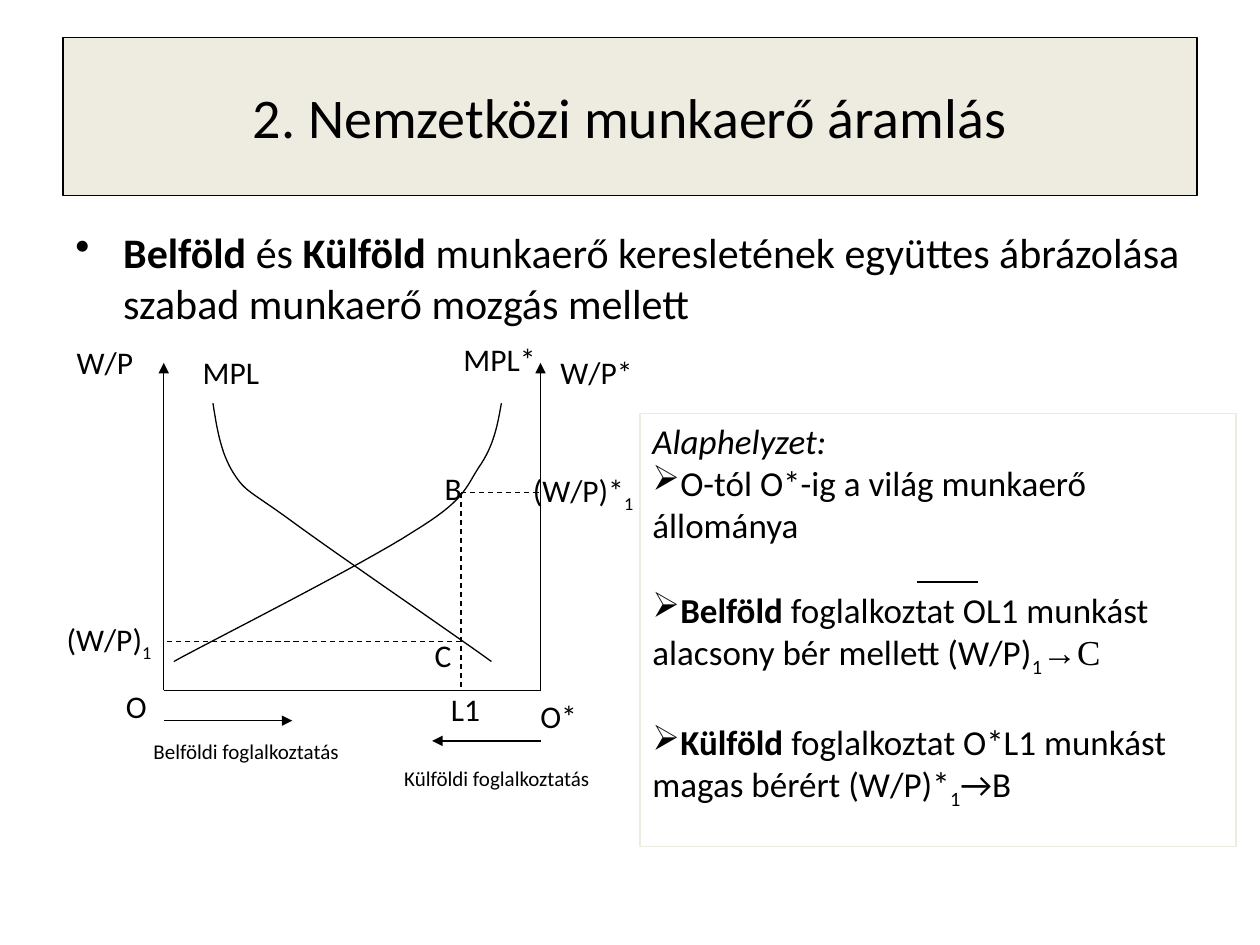
from dataclasses import dataclass
from typing import Optional

from pptx import Presentation
from pptx.dml.color import RGBColor
from pptx.enum.dml import MSO_LINE_DASH_STYLE as Dash
from pptx.enum.shapes import MSO_CONNECTOR as Conn
from pptx.enum.text import MSO_ANCHOR as Anchor, PP_ALIGN as Align
from pptx.oxml.ns import qn
from pptx.util import Inches, Pt
from lxml.etree import SubElement

BLACK = RGBColor(0, 0, 0)
WHITE = RGBColor(255, 255, 255)
CREAM = RGBColor(0xEE, 0xEC, 0xE1)
FONT = "Calibri"

LEFT, RIGHT, TOP, BASE = 1.3, 4.29, 2.88, 5.48  # axes
L1, HIGH, LOW = 3.66, 3.91, 5.09  # labour split and the two wages


@dataclass
class Run:
    text: str
    bold: bool = False
    sub: bool = False
    font: Optional[str] = None


@dataclass
class Para:
    runs: list[Run]
    bullet: str = ""
    gap: float = 0
    indent: float = 0
    italic: bool = False


@dataclass
class Label:
    text: str
    x: float
    y: float
    w: float
    size: int = 18
    sub: str = ""
    wrap: bool = False
    line: Optional[RGBColor] = None


@dataclass
class Line:
    x1: float
    y1: float
    x2: float
    y2: float
    dash: bool = False
    arrow: bool = False


LABELS = [
    Label("B", 3.43, 3.67, 0.37),
    Label("C", 3.35, 5, 0.39, wrap=True),
    Label("MPL", 1.51, 2.75, 0.72),
    Label("MPL*", 3.58, 2.65, 0.82, line=WHITE),
    Label("O*", 4.19, 5.48, 0.49),
    Label("L1", 3.48, 5.43, 0.48),
    Label("W/P", 0.51, 2.67, 0.71, wrap=True),
    Label("W/P*", 4.35, 2.75, 0.77),
    Label("(W/P)", 0.43, 4.87, 1.08, sub="1", wrap=True),
    Label("(W/P)*", 4.13, 3.69, 1.18, sub="1", wrap=True),
    Label("O", 0.9, 5.4, 0.4),
    Label("Belföldi foglalkoztatás", 1.12, 5.81, 2.07, 12, wrap=True),
    Label("Külföldi foglalkoztatás", 3.11, 6.03, 1.95, 12, wrap=True),
]

LINES = [
    Line(1.14, 5.72, 1.14, 5.72, arrow=True),
    Line(LEFT, BASE, LEFT, TOP, arrow=True),
    Line(LEFT, BASE, RIGHT, BASE),
    Line(RIGHT, BASE, RIGHT, TOP, arrow=True),
    Line(L1, HIGH, L1, BASE, dash=True),
    Line(L1, LOW, LEFT, LOW, dash=True),
    Line(L1, HIGH, RIGHT, HIGH, dash=True),
    Line(LEFT, 5.72, 2.32, 5.72, arrow=True),
    Line(RIGHT, 5.88, 3.43, 5.88, arrow=True),
    Line(7.28, 4.62, 7.76, 4.62),
]

# Each curve: a start point, then three Bezier points per segment
CURVES = [
    [(3.98, 3.2), (3.95, 3.37), (3.92, 3.54), (3.8, 3.71), (3.69, 3.88),
     (3.69, 3.97), (3.28, 4.22), (2.88, 4.48), (1.69, 5.08), (1.38, 5.25)],
    [(1.69, 3.2), (1.72, 3.39), (1.75, 3.59), (1.85, 3.75), (1.95, 3.91),
     (1.98, 3.89), (2.32, 4.14), (2.66, 4.39), (3.64, 5.06), (3.9, 5.25)],
]

INTRO = [Para([
    Run("Belföld", True), Run(" és "), Run("Külföld", True),
    Run(" munkaerő keresletének együttes ábrázolása szabad munkaerő "
        "mozgás mellett"),
], "•", gap=4.8, indent=0.38)]

NOTES = [
    Para([Run("Alaphelyzet:")], italic=True),
    Para([Run("O-tól O*-ig a világ munkaerő állománya")], "➢"),
    Para([Run("Belföld", True),
          Run(" foglalkoztat OL1 munkást alacsony bér mellett (W/P)"),
          Run("1", sub=True), Run("→C", font="Times New Roman")],
         "➢", gap=24.4),
    Para([Run("Külföld", True), Run(" foglalkoztat O*L1 munkást")],
         "➢", gap=24.4),
    Para([Run("magas bérért (W/P)*"), Run("1", sub=True), Run("→B")]),
]


def style(font, size: float) -> None:
    font.name, font.size = FONT, Pt(size)
    font.color.rgb = BLACK


def add_para(p, para: Para, size: int) -> None:
    style(p.font, size)
    p.font.italic = para.italic
    p.space_before = Pt(para.gap)
    if para.bullet:
        props = p._p.get_or_add_pPr()
        props.set("marL", str(Inches(para.indent)))
        props.set("indent", str(-Inches(para.indent)))
        mark = props.makeelement(qn("a:buChar"), {"char": para.bullet})
        props.insert_element_before(mark, "a:tabLst", "a:defRPr", "a:extLst")
    for part in para.runs:
        run = p.add_run()
        run.text = part.text
        if part.bold:
            run.font.bold = True
        if part.font:
            run.font.name = part.font
        if part.sub:
            run.font._element.set("baseline", "-25000")


def add_text(slide, box: tuple, paras: list[Para], size: int,
             wrap: bool = True, line: Optional[RGBColor] = None) -> None:
    shape = slide.shapes.add_textbox(*map(Inches, box))
    if line is not None:
        shape.line.color.rgb = line
        shape.line.width = Pt(0.75)
    frame = shape.text_frame
    frame.word_wrap = wrap
    for i, para in enumerate(paras):
        p = frame.add_paragraph() if i else frame.paragraphs[0]
        add_para(p, para, size)


def add_label(slide, label: Label) -> None:
    runs = [Run(label.text)]
    if label.sub:
        runs.append(Run(label.sub, sub=True))
    high = 0.4 if label.size == 18 else 0.3
    add_text(slide, (label.x, label.y, label.w, high), [Para(runs)],
             label.size, label.wrap, label.line)


def add_line(slide, line: Line) -> None:
    ends = map(Inches, (line.x1, line.y1, line.x2, line.y2))
    conn = slide.shapes.add_connector(Conn.STRAIGHT, *ends)
    conn.line.color.rgb = BLACK
    conn.line.width = Pt(0.75)
    if line.dash:
        conn.line.dash_style = Dash.DASH
    if line.arrow:
        SubElement(conn.line._get_or_add_ln(), qn("a:tailEnd"), type="triangle")
    SubElement(conn._element.spPr, qn("a:effectLst"))


def add_curve(slide, pts: list[tuple], steps: int = 16) -> None:
    """Draw joined cubic Bezier segments as a fine open outline."""
    track = []
    for i in range(0, len(pts) - 1, 3):
        for k in range(1, steps + 1):
            t = k / steps
            s = 1 - t
            mix = (s ** 3, 3 * s * s * t, 3 * s * t * t, t ** 3)
            track.append(tuple(
                Inches(sum(m * pt[a] for m, pt in zip(mix, pts[i:i + 4])))
                for a in (0, 1)))
    pen = slide.shapes.build_freeform(*map(Inches, pts[0]))
    pen.add_line_segments(track, close=False)
    shape = pen.convert_to_shape()
    shape.fill.background()
    shape.line.color.rgb = BLACK
    shape.line.width = Pt(0.75)
    shape.shadow.inherit = False


def add_title(slide, text: str) -> None:
    title = slide.shapes.title
    title.left, title.top, title.width, title.height = map(
        Inches, (0.5, 0.3, 9, 1.25))
    title.fill.solid()
    title.fill.fore_color.rgb = CREAM
    title.line.color.rgb = BLACK
    title.line.width = Pt(0.75)
    title.text_frame.vertical_anchor = Anchor.MIDDLE
    title.text_frame.text = text
    p = title.text_frame.paragraphs[0]
    p.alignment = Align.CENTER
    style(p.font, 32)


def main() -> None:
    deck = Presentation()
    deck.slide_width, deck.slide_height = Inches(10), Inches(7.5)
    slide = deck.slides.add_slide(deck.slide_layouts[5])
    add_title(slide, "2. Nemzetközi munkaerő áramlás")
    add_text(slide, (0.5, 1.75, 9, 4.95), INTRO, 24)
    for pts in CURVES:
        add_curve(slide, pts)
    for label in LABELS:
        add_label(slide, label)
    add_text(slide, (5.08, 3.28, 4.73, 3.44), NOTES, 20, line=CREAM)
    for line in LINES:
        add_line(slide, line)
    deck.save("out.pptx")


if __name__ == "__main__":
    main()
